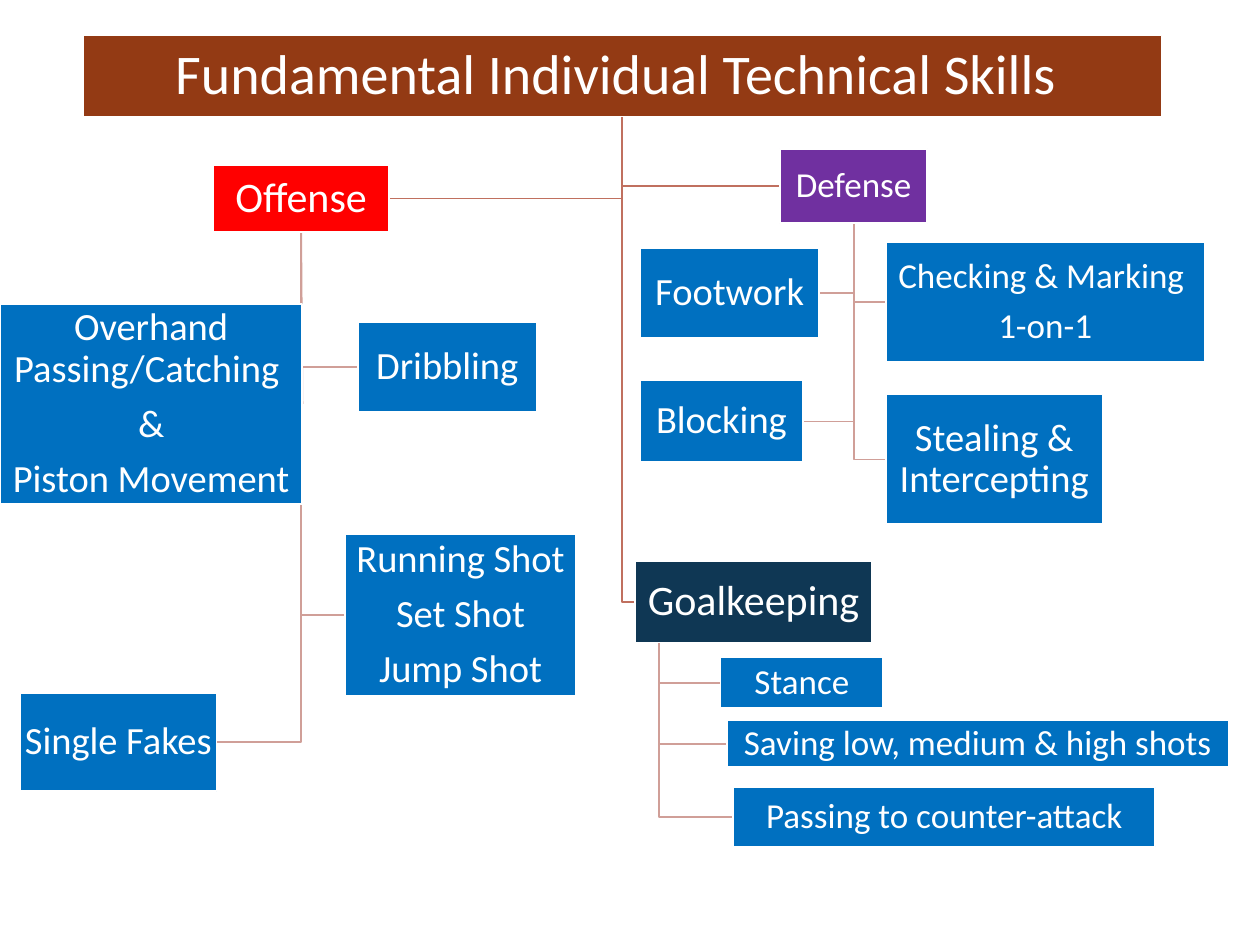
from pptx import Presentation
from pptx.dml.color import RGBColor
from pptx.enum.shapes import MSO_CONNECTOR as Connector, MSO_SHAPE as Shape
from pptx.enum.text import MSO_ANCHOR as Anchor, MSO_AUTO_SIZE as AutoSize, PP_ALIGN as Align
from pptx.oxml.ns import qn
from pptx.util import Pt

FONT = "Calibri"
WHITE = "FFFFFF"
SKILL_BLUE = "0070C0"
BRANCH_LINE = "C0705F"
SKILL_LINE = "D09F98"

ROOT = "Fundamental Individual Technical Skills "
ROOT_BOX = (47.5, 20.2, 616.3, 46.8)

BRANCHES = {
    "Offense": ((121.7, 94.3, 100.8, 38.2), "FF0000", 24, 0.5),
    "Defense": ((445.7, 85, 84.2, 42.5), "7030A0", 20, 0.5),
    "Goalkeeping": ((362.9, 320.4, 135.4, 46.8), "0F3754", 24, 0.1),
}

PASSING = "Overhand Passing/Catching \n&\nPiston Movement"

SKILLS = {
    "Offense": {
        PASSING: ((0, 173.5, 172.8, 114.5), 22),
        "Dribbling": ((204.5, 184.3, 102.2, 51.1), 22),
        "Running Shot\nSet Shot\nJump Shot": ((197.3, 305.3, 131.8, 92.2), 22),
        "Single Fakes": ((11.5, 396, 112.3, 56.2), 22),
    },
    "Defense": {
        "Checking & Marking \n1-on-1": ((506.2, 138.2, 182.2, 68.4), 20),
        "Footwork": ((365.8, 141.8, 102.2, 51.1), 22),
        "Stealing & Intercepting": ((506.2, 225.4, 123.8, 74.2), 22),
        "Blocking": ((365.8, 217.4, 92.9, 46.8), 22),
    },
    "Goalkeeping": {
        "Stance": ((411.8, 375.8, 92.9, 28.8), 20),
        "Saving low, medium & high shots": ((415.4, 411.8, 286.6, 26.6), 20),
        "Passing to counter-attack": ((419, 450, 241.2, 33.8), 20),
    },
}


def color(value):
    return RGBColor.from_string(value)


class SkillChart:
    def __init__(self, slide):
        self.slide = slide

    def outline(self, shape, value):
        shape.line.color.rgb = color(value)
        shape.line.width = Pt(1)

    def dress(self, shape, text, fill, size):
        shape.fill.solid()
        shape.fill.fore_color.rgb = color(fill)
        self.outline(shape, WHITE)
        frame = shape.text_frame
        frame.text = text
        frame.word_wrap = True
        frame.auto_size = AutoSize.NONE
        frame.vertical_anchor = Anchor.MIDDLE
        frame.margin_left = frame.margin_right = Pt(1)
        frame.margin_top = frame.margin_bottom = Pt(1)
        for paragraph in frame.paragraphs:
            paragraph.alignment = Align.CENTER
            paragraph.line_spacing = 0.9
            paragraph.space_before = Pt(0)
            paragraph.space_after = Pt(0.35 * size)
            paragraph.font.name = FONT
            paragraph.font.size = Pt(size)
            paragraph.font.color.rgb = color(WHITE)

    def title(self, text, area, fill, size):
        heading = self.slide.shapes.title
        heading.left, heading.top, heading.width, heading.height = map(Pt, area)
        self.dress(heading, text, fill, size)

    def box(self, text, area, fill, size):
        shape = self.slide.shapes.add_shape(Shape.RECTANGLE, *map(Pt, area))
        shape.shadow.inherit = False
        self.dress(shape, text, fill, size)
        return shape

    def elbow(self, parent, child, value, trunk_share=0.5):
        left, top, width, height = parent
        trunk = left + width * trunk_share
        child_left, child_top, child_width, child_height = child
        middle = child_top + child_height / 2
        side = child_left if child_left > trunk else child_left + child_width
        builder = self.slide.shapes.build_freeform(Pt(trunk), Pt(top + height))
        builder.add_line_segments(
            [(Pt(trunk), Pt(middle)), (Pt(side), Pt(middle))], close=False
        )
        bend = builder.convert_to_shape()
        bend.shadow.inherit = False
        bend.fill.background()
        self.outline(bend, value)

    def straight(self, value):
        line = self.slide.shapes.add_connector(Connector.STRAIGHT, 0, 0, 0, 0)
        properties = line._element.spPr
        self.outline(line, value)
        properties.append(properties.makeelement(qn("a:effectLst"), {}))
        return line


def main():
    deck = Presentation()
    deck.slide_width, deck.slide_height = Pt(720), Pt(540)
    chart = SkillChart(deck.slides.add_slide(deck.slide_layouts[5]))
    chart.title(ROOT, ROOT_BOX, "933A14", 32)

    for branch, (area, _, _, trunk_share) in BRANCHES.items():
        chart.elbow(ROOT_BOX, area, BRANCH_LINE)
        for skill, (skill_area, _) in SKILLS[branch].items():
            if skill != PASSING:
                chart.elbow(area, skill_area, SKILL_LINE, trunk_share)
    passing_link = chart.straight(SKILL_LINE)

    boxes = {}
    for branch, (area, fill, size, _) in BRANCHES.items():
        boxes[branch] = chart.box(branch, area, fill, size)
        for skill, (skill_area, skill_size) in SKILLS[branch].items():
            boxes[skill] = chart.box(skill, skill_area, SKILL_BLUE, skill_size)

    passing_link.begin_connect(boxes["Offense"], 2)
    passing_link.end_connect(boxes[PASSING], 3)
    deck.save("out.pptx")


if __name__ == "__main__":
    main()
